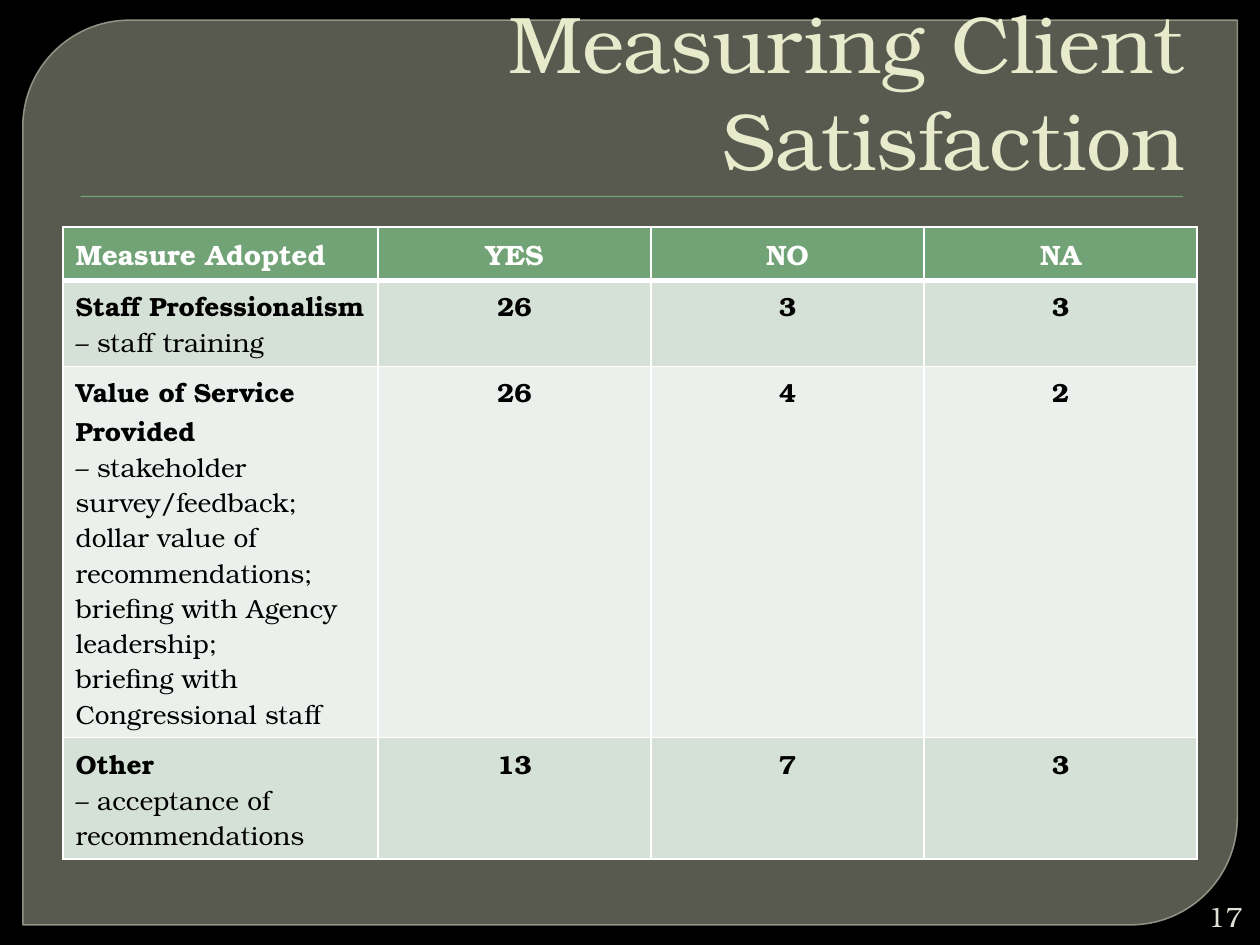
from lxml import etree
from pptx import Presentation
from pptx.dml.color import RGBColor
from pptx.enum.shapes import MSO_SHAPE
from pptx.enum.text import MSO_ANCHOR, MSO_AUTO_SIZE, PP_ALIGN
from pptx.oxml.ns import qn
from pptx.util import Pt

LEFT, CENTER, RIGHT = PP_ALIGN.LEFT, PP_ALIGN.CENTER, PP_ALIGN.RIGHT
FONT = "TeX Gyre Bonum"
COLORS = {
    "background": "000000", "panel": "888B7B", "panel_line": "9DA090",
    "green": "72A376", "title": "E7EACB", "number": "E0E0D4",
    "white": "FFFFFF", "black": "000000",
    "band_dark": "D5E0D6", "band_light": "EBF0EC",
}
COLUMN_WIDTHS = [180, 156, 156, 156]
ROW_HEIGHT = 29.2

# Each label is a list of paragraphs, each a list of (text, bold) runs
HEADER = ["Measure Adopted", "YES", "NO", "NA"]
MEASURES = [
    ([[("Staff Professionalism ", True), ("– staff training", False)]],
     [26, 3, 3]),
    ([[("Value of Service Provided", True)],
      [("– stakeholder survey/feedback; dollar value of recommendations; "
        "briefing with Agency leadership;", False)],
      [("briefing with Congressional staff", False)]],
     [26, 4, 2]),
    ([[("Other", True)],
      [("– acceptance of recommendations", False)]],
     [13, 7, 3]),
]


def color(name):
    return RGBColor.from_string(COLORS[name])


def set_fill(fill, name):
    fill.solid()
    fill.fore_color.rgb = color(name)


def format_paragraph(paragraph, size, color_name, alignment):
    paragraph.alignment = alignment
    paragraph.font.name = FONT
    paragraph.font.size = Pt(size)
    paragraph.font.color.rgb = color(color_name)


def set_alpha(properties, percent):
    for element in properties.iter(qn("a:srgbClr")):
        etree.SubElement(element, qn("a:alpha"), val=str(percent * 1000))


def add_back_shape(slide, kind, position, fill_name, layer):
    """Add a shape at the given layer, counted from the back."""
    shape = slide.shapes.add_shape(kind, *map(Pt, position))
    shape.shadow.inherit = False
    set_fill(shape.fill, fill_name)
    shape.line.fill.background()
    slide.shapes.element.insert(2 + layer, shape.element)
    return shape


def add_panel(slide):
    panel = add_back_shape(slide, MSO_SHAPE.ROUND_2_DIAG_RECTANGLE,
                           (13, 11.5, 694, 517), "panel", 0)
    panel.adjustments[0] = 0.118
    panel.adjustments[1] = 0
    set_alpha(panel.element.spPr, 65)
    panel.line.color.rgb = color("panel_line")
    panel.line.width = Pt(0.87)
    set_alpha(panel.element.spPr.find(qn("a:ln")), 88)


def add_title(slide, text):
    title = slide.shapes.title
    title.left, title.top, title.width, title.height = map(Pt, (36, 20, 648, 90))
    frame = title.text_frame
    frame.text = text
    frame.word_wrap = True
    frame.auto_size = MSO_AUTO_SIZE.NONE
    frame.vertical_anchor = MSO_ANCHOR.BOTTOM
    format_paragraph(frame.paragraphs[0], 46, "title", RIGHT)
    frame.paragraphs[0]._p.get_or_add_pPr().set("marL", str(Pt(4)))


def set_borders(cell, top, bottom):
    properties = cell._tc.get_or_add_tcPr()
    widths = {"a:lnL": 1, "a:lnR": 1, "a:lnT": top, "a:lnB": bottom}
    for index, (tag, width) in enumerate(widths.items()):
        line = etree.Element(qn(tag), w=str(Pt(width)))
        fill = etree.SubElement(line, qn("a:solidFill"))
        etree.SubElement(fill, qn("a:srgbClr"), val=COLORS["white"])
        properties.insert(index, line)


def fill_cell(cell, paragraphs, size, color_name, alignment, fill_name):
    frame = cell.text_frame
    for index, runs in enumerate(paragraphs):
        paragraph = frame.add_paragraph() if index else frame.paragraphs[0]
        format_paragraph(paragraph, size, color_name, alignment)
        for text, bold in runs:
            run = paragraph.add_run()
            run.text = text
            run.font.bold = bold
    set_fill(cell.fill, fill_name)


def add_measure_table(slide):
    row_count = len(MEASURES) + 1
    table = slide.shapes.add_table(
        row_count, len(HEADER), Pt(36), Pt(129.6),
        Pt(sum(COLUMN_WIDTHS)), Pt(ROW_HEIGHT * row_count)).table
    for column, width in zip(table.columns, COLUMN_WIDTHS):
        column.width = Pt(width)

    rows = [[[[(text, True)]] for text in HEADER]]
    for label, counts in MEASURES:
        rows.append([label] + [[[(str(count), True)]] for count in counts])

    for row_index, contents in enumerate(rows):
        table.rows[row_index].height = Pt(ROW_HEIGHT)
        if row_index == 0:
            size, text_color, fill_name = 16, "white", "green"
        else:
            size, text_color = 15, "black"
            fill_name = "band_dark" if row_index % 2 else "band_light"
        for column_index, paragraphs in enumerate(contents):
            cell = table.cell(row_index, column_index)
            alignment = CENTER if column_index else LEFT
            fill_cell(cell, paragraphs, size, text_color, alignment, fill_name)
            set_borders(cell, top=3 if row_index == 1 else 1,
                        bottom=3 if row_index == 0 else 1)


def add_slide_number(slide, text):
    box = slide.shapes.add_textbox(Pt(680.4), Pt(512.6), Pt(36.7), Pt(21.6))
    frame = box.text_frame
    frame.text = text
    frame.word_wrap = True
    frame.vertical_anchor = MSO_ANCHOR.MIDDLE
    format_paragraph(frame.paragraphs[0], 16, "number", RIGHT)


def main():
    presentation = Presentation()
    presentation.slide_width, presentation.slide_height = Pt(720), Pt(540)
    slide = presentation.slides.add_slide(presentation.slide_layouts[5])

    # Backdrop: black page, translucent panel, rule under the title
    set_fill(slide.background.fill, "background")
    add_panel(slide)
    add_back_shape(slide, MSO_SHAPE.RECTANGLE, (46, 112, 630, 0.72), "green", 1)

    # Content
    add_title(slide, "Measuring Client Satisfaction")
    add_measure_table(slide)
    add_slide_number(slide, "17")
    presentation.save("out.pptx")


if __name__ == "__main__":
    main()
